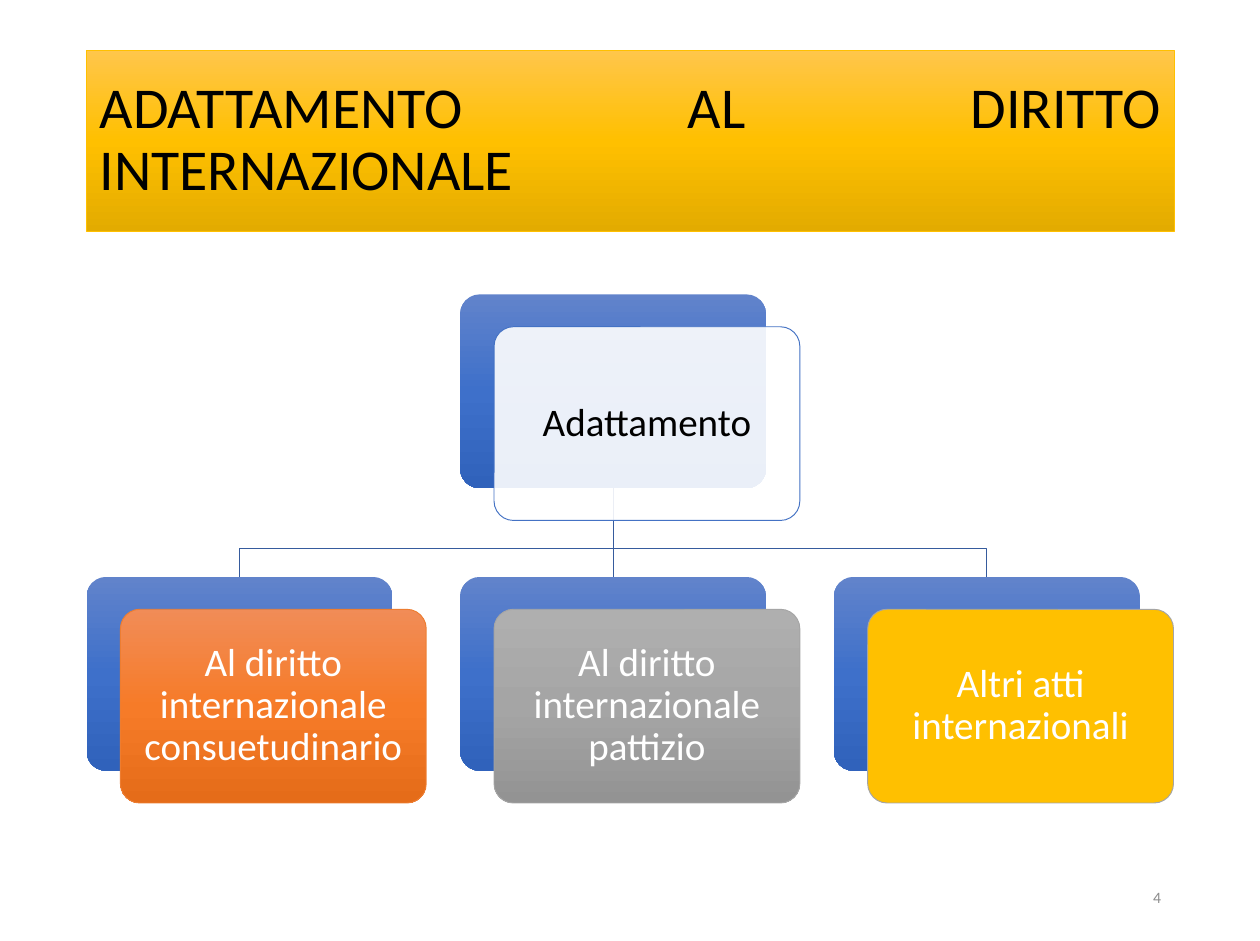
from copy import deepcopy
from lxml.etree import SubElement
from pptx import Presentation
from pptx.dml.color import RGBColor
from pptx.enum.shapes import MSO_CONNECTOR, MSO_SHAPE
from pptx.enum.text import MSO_ANCHOR, PP_ALIGN
from pptx.oxml.ns import qn
from pptx.util import Pt

rgb = RGBColor.from_string


def paint(shape, colors, outline=None):
    """Fill with one colour or a top-to-bottom gradient, and outline or hide the edge."""
    shape.shadow.inherit = False
    if len(colors) == 1:
        shape.fill.solid()
        shape.fill.fore_color.rgb = rgb(colors[0])
    else:
        shape.fill.gradient()
        shape.fill.gradient_angle = 270
        stop_list = shape._element.spPr.find(qn("a:gradFill")).find(qn("a:gsLst"))
        stop_list.insert(1, deepcopy(stop_list[0]))
        for stop, position, color in zip(shape.fill.gradient_stops, (0, 0.5, 1), colors):
            stop.position = position
            stop.color.rgb = rgb(color)
    if outline:
        shape.line.color.rgb = rgb(outline)
        shape.line.width = Pt(0.5)
    else:
        shape.line.fill.background()


def write(shape, text, size, color, align, spacing, inset):
    frame = shape.text_frame
    frame_format = {
        "word_wrap": True,
        "vertical_anchor": MSO_ANCHOR.MIDDLE,
        "margin_left": Pt(inset),
        "margin_right": Pt(inset),
    }
    for name, value in frame_format.items():
        setattr(frame, name, value)
    paragraph = frame.paragraphs[0]
    paragraph.alignment = align
    paragraph.line_spacing = spacing
    run = paragraph.add_run()
    run.text = text
    for name, value in {"name": "Calibri", "size": Pt(size)}.items():
        setattr(run.font, name, value)
    run.font.color.rgb = rgb(color)


presentation = Presentation()
presentation.slide_width, presentation.slide_height = Pt(677.5), Pt(506.2)
slide = presentation.slides.add_slide(presentation.slide_layouts[6])
shapes = slide.shapes

heading = shapes.add_shape(MSO_SHAPE.RECTANGLE, Pt(46.6), Pt(27), Pt(584.8), Pt(97.6))
paint(heading, ["FFC64B", "FFC000", "E3AB00"], "FFC000")
write(heading, "ADATTAMENTO AL DIRITTO INTERNAZIONALE", 31.1, "000000",
      PP_ALIGN.JUSTIFY, 0.9, 7.2)

# Tree geometry: each node is a blue card with a label card set off from it
card_width, card_height = 164.4, 104.2
label_dx, label_dy = 18.2, 17.4
first_left, column_step = 46.6, 200.9
root_top, branch_top = 158.4, 310.4
root_left = first_left + column_step
root_center = root_left + card_width / 2
root_bottom = root_top + card_height
bend_y = 295

branches = [
    ("Al diritto internazionale consuetudinario", ["F18C57", "F67B28", "E56C19"], "ED7D31"),
    ("Al diritto internazionale pattizio", ["AFAFAF", "A5A5A5", "939393"], "A5A5A5"),
    ("Altri atti internazionali", ["FFC000"], "A5A5A5"),
]
nodes = [("Adattamento", ["FFFFFF"], "4472C4", "000000", root_left, root_top)]
for column, (text, colors, outline) in enumerate(branches):
    nodes.append((text, colors, outline, "FFFFFF",
                  first_left + column * column_step, branch_top))

# Links from the root to its branches
trunk = shapes.add_connector(MSO_CONNECTOR.STRAIGHT, Pt(root_center), Pt(root_bottom),
                             Pt(root_center), Pt(branch_top))
SubElement(trunk._element.spPr, qn("a:effectLst"))
links = [trunk]
for side in (-1, 1):
    branch_center = root_center + side * column_step
    builder = shapes.build_freeform(Pt(root_center), Pt(root_bottom))
    corners = [(root_center, bend_y), (branch_center, bend_y), (branch_center, branch_top)]
    builder.add_line_segments([(Pt(x), Pt(y)) for x, y in corners], close=False)
    elbow = builder.convert_to_shape()
    elbow.fill.background()
    elbow.shadow.inherit = False
    links.append(elbow)
for link in links:
    link.line.color.rgb = rgb("365B9D")
    link.line.width = Pt(0.5)

for text, colors, outline, text_color, left, top in nodes:
    back = shapes.add_shape(MSO_SHAPE.ROUNDED_RECTANGLE, Pt(left), Pt(top),
                            Pt(card_width), Pt(card_height))
    paint(back, ["6183CB", "3E70CA", "3062BB"])
    label = shapes.add_shape(MSO_SHAPE.ROUNDED_RECTANGLE, Pt(left + label_dx),
                             Pt(top + label_dy), Pt(card_width), Pt(card_height))
    paint(label, colors, outline)
    write(label, text, 21, text_color, PP_ALIGN.CENTER, 0.9, 9.2)
    for card in (back, label):
        card.adjustments[0] = 0.1
    if top == root_top:
        fill_color = label._element.spPr.find(qn("a:solidFill"))[0]
        SubElement(fill_color, qn("a:alpha"), val="90000")

page_number = shapes.add_textbox(Pt(478.8), Pt(469.4), Pt(152.6), Pt(26.6))
write(page_number, "4", 8.5, "8C8C8C", PP_ALIGN.RIGHT, 1.0, 7.2)

presentation.save("out.pptx")
